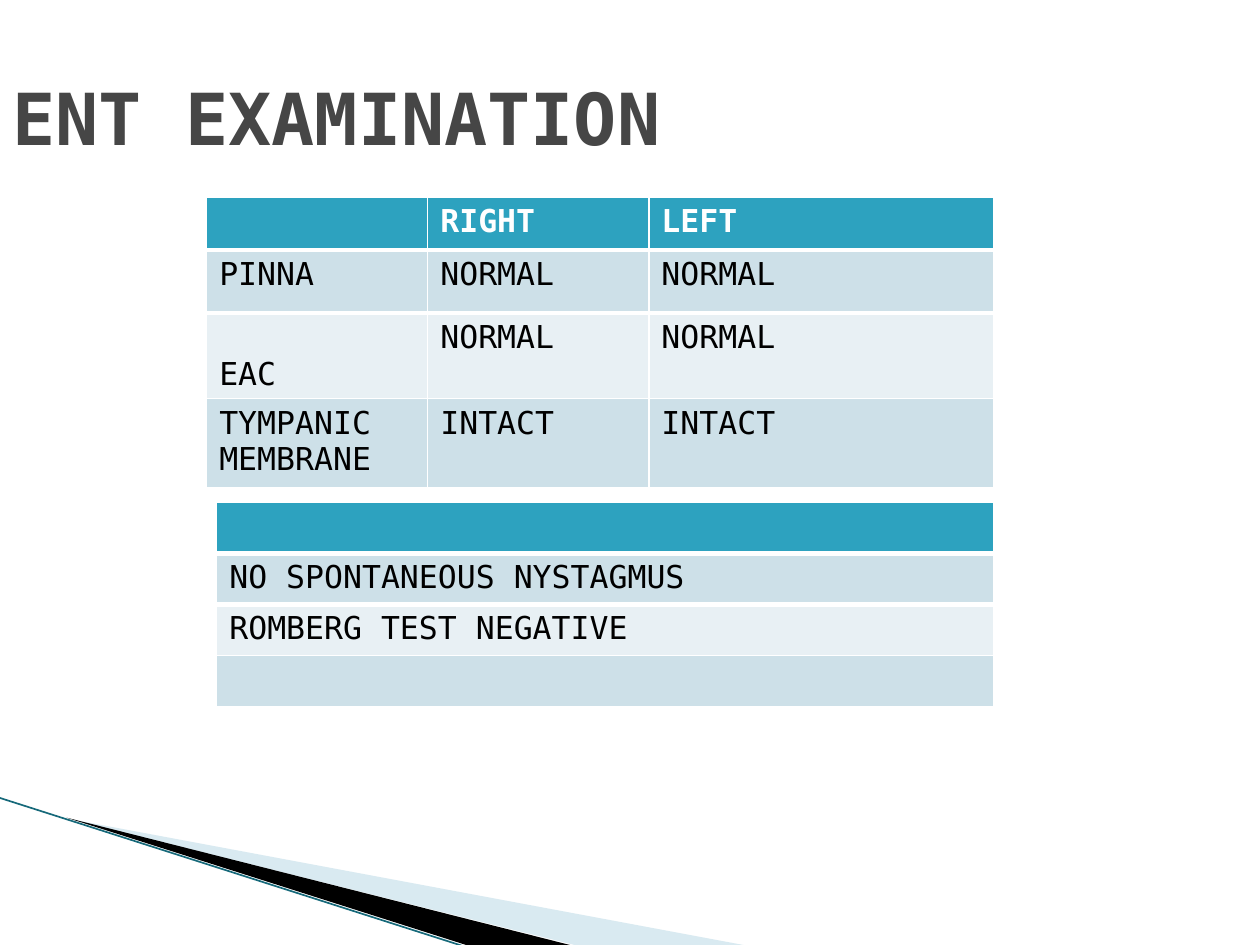
import pptx
import pptx.dml.color
import pptx.enum.shapes
import pptx.enum.text
import pptx.oxml.ns
import pptx.util
from lxml import etree

RGBColor = pptx.dml.color.RGBColor
Anchor = pptx.enum.text.MSO_ANCHOR
qn = pptx.oxml.ns.qn

WHITE = RGBColor(0xFF, 0xFF, 0xFF)
BLACK = RGBColor(0x00, 0x00, 0x00)
TITLE_GREY = RGBColor(0x46, 0x46, 0x46)
HEADER_TEAL = RGBColor(0x2D, 0xA2, 0xBF)
BANDS = (RGBColor(0xCD, 0xE0, 0xE8), RGBColor(0xE8, 0xF0, 0xF4))
WEDGE_BLUE = RGBColor(0xA0, 0xCB, 0xDC)
EDGE_TEAL = RGBColor(0x16, 0x69, 0x7A)

FONT = "DejaVu Sans Mono"
WIDTH, HEIGHT = pptx.util.Inches(10), pptx.util.Inches(7.5)
COLUMNS, ROWS = 100, 75

EAR_FINDINGS = (
    ("", "RIGHT", "LEFT"),
    ("PINNA", "NORMAL", "NORMAL"),
    ("EAC", "NORMAL", "NORMAL"),
    ("TYMPANIC MEMBRANE", "INTACT", "INTACT"),
)
BALANCE_FINDINGS = (
    ("",),
    ("NO SPONTANEOUS NYSTAGMUS",),
    ("ROMBERG TEST NEGATIVE",),
    ("",),
)


def across(columns):
    """Return the length of a number of grid columns."""
    return round(WIDTH * columns / COLUMNS)


def down(rows):
    """Return the length of a number of grid rows."""
    return round(HEIGHT * rows / ROWS)


def add_span(para, text, size, color, bold):
    """Add one formatted run to a paragraph."""
    span = para.add_run()
    span.text = text
    span.font.name = FONT
    span.font.size = pptx.util.Pt(size)
    span.font.bold = bold
    span.font.color.rgb = color


def set_frame(wedge, frame):
    """Give a wedge a new frame while its corners stay in place."""
    left, top = across(frame[0]), down(frame[1])
    width, height = across(frame[2]), down(frame[3])
    shift_x, shift_y = wedge.left - left, wedge.top - top
    outline = wedge._element.spPr.find(".//" + qn("a:path"))
    outline.set("w", str(width))
    outline.set("h", str(height))
    for point in outline.iter(qn("a:pt")):
        point.set("x", str(int(point.get("x")) + shift_x))
        point.set("y", str(int(point.get("y")) + shift_y))
    wedge.left, wedge.top = left, top
    wedge.width, wedge.height = width, height


def add_wedge(page, corners, frame, color, opacity=100):
    """Draw a filled triangle of the corner decoration."""
    points = [(across(x), down(y)) for x, y in corners]
    builder = page.shapes.build_freeform(*points[0])
    builder.add_line_segments(points[1:], close=True)
    wedge = builder.convert_to_shape()
    set_frame(wedge, frame)
    wedge.shadow.inherit = False
    wedge.line.fill.background()
    wedge.fill.solid()
    wedge.fill.fore_color.rgb = color
    if opacity < 100:
        tint = wedge._element.spPr.find(".//" + qn("a:srgbClr"))
        etree.SubElement(tint, qn("a:alpha")).set("val", str(opacity * 1000))


def add_edge(page, start, end):
    """Draw the thin line along the corner decoration."""
    edge = page.shapes.add_connector(
        pptx.enum.shapes.MSO_CONNECTOR.STRAIGHT,
        across(start[0]), down(start[1]), across(end[0]), down(end[1]))
    edge.line.color.rgb = EDGE_TEAL
    edge.line.width = pptx.util.Pt(0.95)
    etree.SubElement(edge._element.spPr, qn("a:effectLst"))


def add_title(page, text):
    """Place and fill the title placeholder."""
    title = page.shapes.title
    title.left, title.top = 0, down(3)
    title.width, title.height = across(90), down(12.5)
    title.text_frame.word_wrap = True
    title.text_frame.vertical_anchor = Anchor.MIDDLE
    para = title.text_frame.paragraphs[0]
    para.alignment = pptx.enum.text.PP_ALIGN.LEFT
    add_span(para, text, 41, TITLE_GREY, True)


def add_rule(cell, side, points):
    """Draw a white border on one side of a cell, ahead of its fill."""
    properties = cell._tc.get_or_add_tcPr()
    rule = etree.Element(qn("a:" + side), w=str(pptx.util.Pt(points)))
    fill = etree.SubElement(rule, qn("a:solidFill"))
    etree.SubElement(fill, qn("a:srgbClr")).set("val", str(WHITE))
    properties.insert(0, rule)


def add_findings(page, left, top, widths, heights, findings):
    """Add a table with a teal header and banded rows."""
    table = page.shapes.add_table(
        len(heights), len(widths), across(left), down(top),
        across(sum(widths)), down(sum(heights))).table
    for column, width in zip(table.columns, widths):
        column.width = across(width)
    for index, (row, height, texts) in enumerate(
            zip(table.rows, heights, findings)):
        row.height = down(height)
        header = index == 0
        for cell, text in zip(row.cells, texts):
            cell.fill.solid()
            cell.fill.fore_color.rgb = (
                HEADER_TEAL if header else BANDS[(index - 1) % 2])
            if header:
                add_rule(cell, "lnB", 3)
            elif index == 1:
                add_rule(cell, "lnT", 3)
            if text:
                add_span(cell.text_frame.paragraphs[0], text, 18,
                         WHITE if header else BLACK, header)
    return table


def main():
    """Build the examination slide."""
    deck = pptx.Presentation()
    deck.slide_width, deck.slide_height = WIDTH, HEIGHT
    page = deck.slides.add_slide(deck.slide_layouts[5])
    add_wedge(page, ((5.5, 65), (59, 75), (45.6, 75)),
              (7.8, 54.7, 41.6, 15.8), WEDGE_BLUE, 40)
    add_wedge(page, ((5.3, 64.9), (45.25, 75), (37, 75)),
              (-0.6, 63.3, 41.6, 9.2), BLACK)
    add_edge(page, (-0.1, 63.3), (37.1, 75.2))
    ears = add_findings(page, 16.4, 15.65, (17.55, 17.55, 27.35),
                        (4.2, 5, 6.8, 7.05), EAR_FINDINGS)
    ears.cell(2, 0).vertical_anchor = Anchor.BOTTOM
    add_title(page, "ENT EXAMINATION")
    add_findings(page, 17.2, 39.85, (61.65,), (4.06,) * 4, BALANCE_FINDINGS)
    deck.save("out.pptx")


if __name__ == "__main__":
    main()
